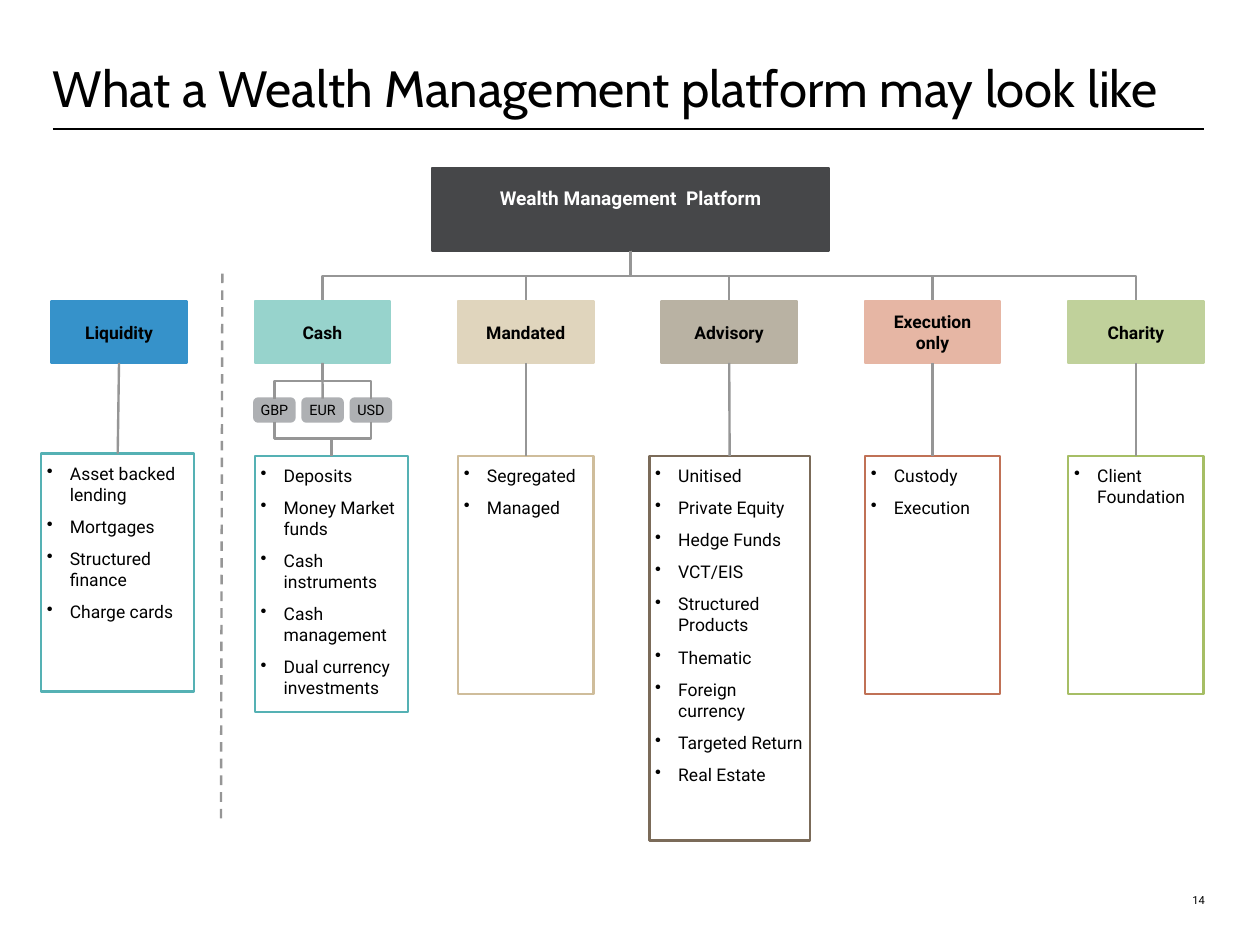
from lxml import etree
from pptx import Presentation
from pptx.dml.color import RGBColor
from pptx.enum.dml import MSO_LINE
from pptx.enum.shapes import MSO_CONNECTOR, MSO_SHAPE
from pptx.enum.text import MSO_ANCHOR, MSO_AUTO_SIZE, PP_ALIGN
from pptx.oxml.ns import qn
from pptx.util import Cm, Pt

RECT, ROUND = MSO_SHAPE.RECTANGLE, MSO_SHAPE.ROUNDED_RECTANGLE
STRAIGHT, ELBOW = MSO_CONNECTOR.STRAIGHT, MSO_CONNECTOR.ELBOW
LEFT, CENTER, RIGHT = PP_ALIGN.LEFT, PP_ALIGN.CENTER, PP_ALIGN.RIGHT
TOP, MIDDLE, BOTTOM = MSO_ANCHOR.TOP, MSO_ANCHOR.MIDDLE, MSO_ANCHOR.BOTTOM
GREY = "969696"

TITLE = "What a Wealth Management platform may look like"
ROOT = "Wealth Management  Platform"
COINS = ["GBP", "EUR", "USD"]
# name, head fill, list outline, list box (shift, top, width, height), items
BRANCHES = [
    ("Liquidity", "3692CA", "55B1B4", (-0.23, 10.06, 3.4, 5.28),
     ["Asset backed lending", "Mortgages", "Structured finance",
      "Charge cards"]),
    ("Cash", "97D3CC", "55B1B4", (0, 10.11, 3.4, 5.69),
     ["Deposits", "Money Market funds", "Cash instruments",
      "Cash management", "Dual currency investments"]),
    ("Mandated", "E0D5BD", "CFBD9B", (0, 10.11, 3, 5.28),
     ["Segregated", "Managed"]),
    ("Advisory", "B9B2A3", "7B6B59", (-0.27, 10.11, 3.56, 8.53),
     ["Unitised", "Private Equity", "Hedge Funds", "VCT/EIS",
      "Structured Products", "Thematic", "Foreign currency",
      "Targeted Return", "Real Estate"]),
    ("Execution\vonly", "E6B6A4", "C07156", (0, 10.11, 3, 5.28),
     ["Custody", "Execution"]),
    ("Charity", "C0D19B", "A6BE65", (0, 10.11, 3, 5.28),
     ["Client Foundation"]),
]

ROOT_X, ROOT_Y, ROOT_W, ROOT_H = 9.58, 3.73, 8.81, 1.83
HEAD_X, HEAD_Y, HEAD_W, HEAD_H, HEAD_STEP = 1.14, 6.68, 3, 1.37, 4.51
COIN_X, COIN_Y, COIN_W, COIN_H, COIN_STEP = 5.64, 8.84, 0.89, 0.51, 1.07

deck = Presentation()
deck.slide_width, deck.slide_height = Cm(27.94), Cm(20.96)
slide = deck.slides.add_slide(deck.slide_layouts[5])
shapes = slide.shapes


def color(code):
    return RGBColor.from_string(code)


def add_bullet(para):
    props = para._p.get_or_add_pPr()
    props.set("marL", str(Cm(0.51)))
    props.set("indent", str(-Cm(0.51)))
    tint = etree.SubElement(props, qn("a:buClr"))
    etree.SubElement(tint, qn("a:srgbClr")).set("val", "000000")
    etree.SubElement(props, qn("a:buChar")).set("char", "•")


def write(shape, lines, size=11, font="Roboto", ink="000000", bold=False,
          align=LEFT, anchor=MIDDLE, inset=(0, 0, 0, 0), bullet=False,
          leading=None):
    """Fill a shape with one paragraph per line; inset is left, top, right, bottom."""
    frame = shape.text_frame
    frame.word_wrap, frame.auto_size = True, MSO_AUTO_SIZE.NONE
    frame.vertical_anchor = anchor
    (frame.margin_left, frame.margin_top,
     frame.margin_right, frame.margin_bottom) = map(Cm, inset)
    for i, line in enumerate(lines):
        para = frame.add_paragraph() if i else frame.paragraphs[0]
        para.text = line
        if bullet:
            add_bullet(para)
        para.alignment = align
        para.space_before = Pt(7 if i else 0)
        if leading:
            para.line_spacing = Pt(leading)
        for run in para.runs:
            run.font.name, run.font.size = font, Pt(size)
            run.font.bold, run.font.color.rgb = bold, color(ink)


def add_box(x, y, w, h, line, fill=None, kind=RECT):
    box = shapes.add_shape(kind, Cm(x), Cm(y), Cm(w), Cm(h))
    box.shadow.inherit = False
    if fill:
        box.fill.solid()
        box.fill.fore_color.rgb = color(fill)
    else:
        box.fill.background()
    box.line.color.rgb, box.line.width = color(line), Pt(1.5)
    return box


def add_line(x1, y1, x2, y2, kind=STRAIGHT, ink=GREY, width=1.5):
    line = shapes.add_connector(kind, Cm(x1), Cm(y1), Cm(x2), Cm(y2))
    line.line.color.rgb, line.line.width = color(ink), Pt(width)
    etree.SubElement(line._element.spPr, qn("a:effectLst"))
    return line


def join(upper, lower):
    """Run a straight line from the bottom of one box to the top of another."""
    line = add_line(0, 0, 1, 1)
    line.begin_connect(upper, 2)
    line.end_connect(lower, 0)


def add_elbow(x1, y1, x2, y2):
    """Draw a down-across-down line as a turned elbow connector."""
    mx, my = (x1 + x2) / 2, (y1 + y2) / 2
    half, rise = (y2 - y1) / 2, abs(x2 - x1) / 2
    turn = 90
    if x2 > x1:
        turn, half = 270, -half
    line = add_line(mx - half, my - rise, mx + half, my + rise, ELBOW)
    line._element.spPr.find(qn("a:xfrm")).set("rot", str(turn * 60000))


title = shapes.title
title.left, title.top, title.width, title.height = map(
    Cm, (1.17, 0, 25.53, 2.62))
write(title, [TITLE], size=32, font="Cabin", anchor=BOTTOM, leading=32)
add_line(1.17, 2.87, 26.7, 2.87, ink="000000", width=1.25)

number = shapes.add_textbox(Cm(25.58), Cm(19.05), Cm(1.14), Cm(1.07))
write(number, ["14"], size=7, align=RIGHT, anchor=BOTTOM)

root = add_box(ROOT_X, ROOT_Y, ROOT_W, ROOT_H, "464749", "464749")
write(root, [ROOT], size=12, ink="FFFFFF", bold=True, align=CENTER,
      inset=(0.13, 0, 0.13, 0.5))

for i, (name, fill, edge, (shift, y, w, h), items) in enumerate(BRANCHES):
    x = HEAD_X + i * HEAD_STEP
    mid = x + HEAD_W / 2
    if name != "Liquidity":
        add_elbow(ROOT_X + ROOT_W / 2, ROOT_Y + ROOT_H, mid, HEAD_Y)
    head = add_box(x, HEAD_Y, HEAD_W, HEAD_H, fill, fill)
    write(head, [name], bold=True, align=CENTER)
    panel = add_box(x + shift, y, w, h, edge)
    write(panel, items, anchor=TOP, inset=(0.13, 0.2, 0.13, 0), bullet=True)
    if name != "Cash":
        join(head, panel)
        continue
    for j, coin in enumerate(COINS):
        left = COIN_X + j * COIN_STEP
        pill = add_box(left, COIN_Y, COIN_W, COIN_H, "AEB0B3", "AEB0B3", ROUND)
        write(pill, [coin], size=9, align=CENTER)
        if coin == "EUR":
            join(head, pill)
        else:
            spot = left + COIN_W / 2
            add_elbow(mid, HEAD_Y + HEAD_H, spot, COIN_Y)
            add_elbow(spot, COIN_Y + COIN_H, x + shift + w / 2, y)

split = add_line(4.93, 6.07, 4.9, 18.19)
split.line.dash_style = MSO_LINE.DASH

deck.save("out.pptx")
